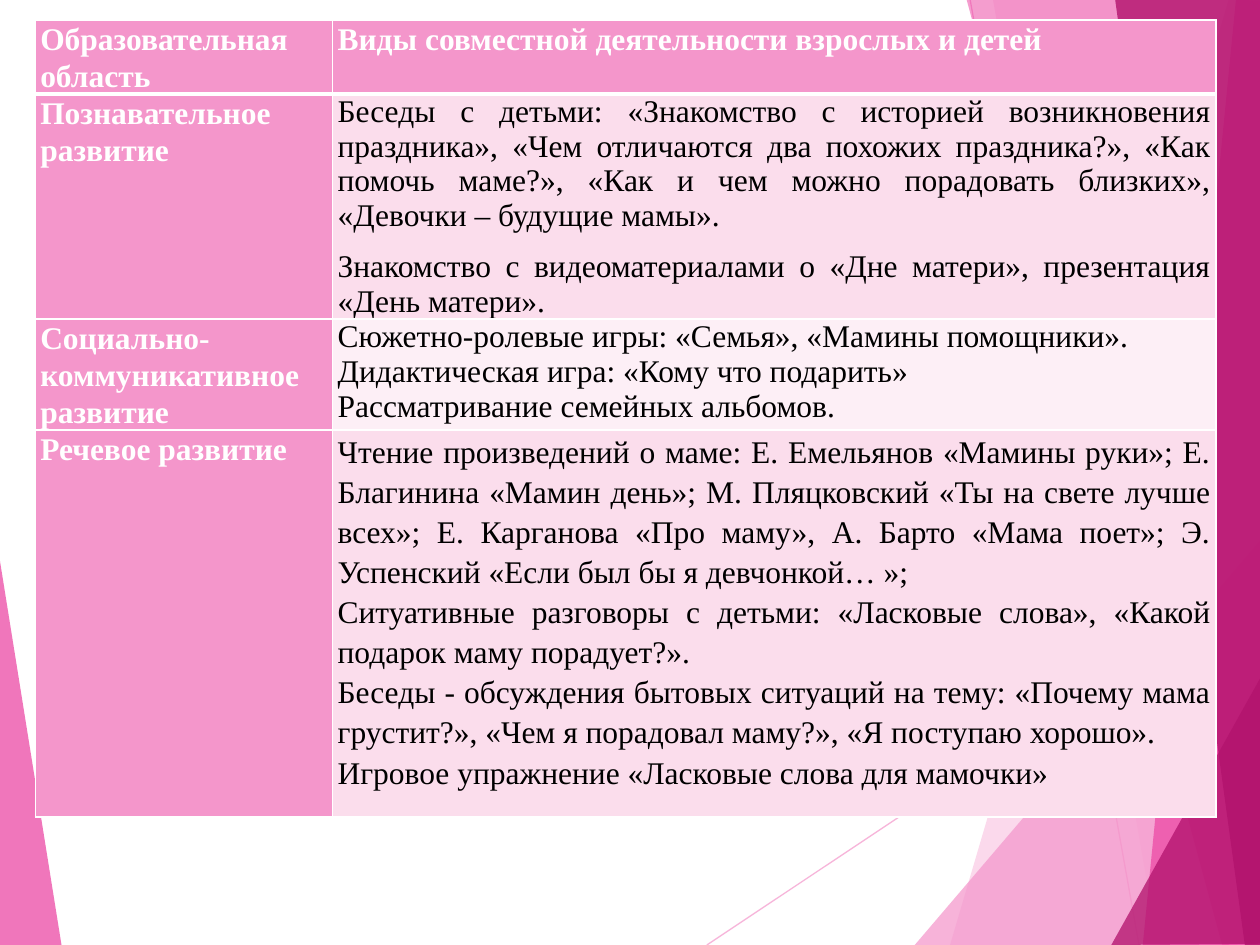
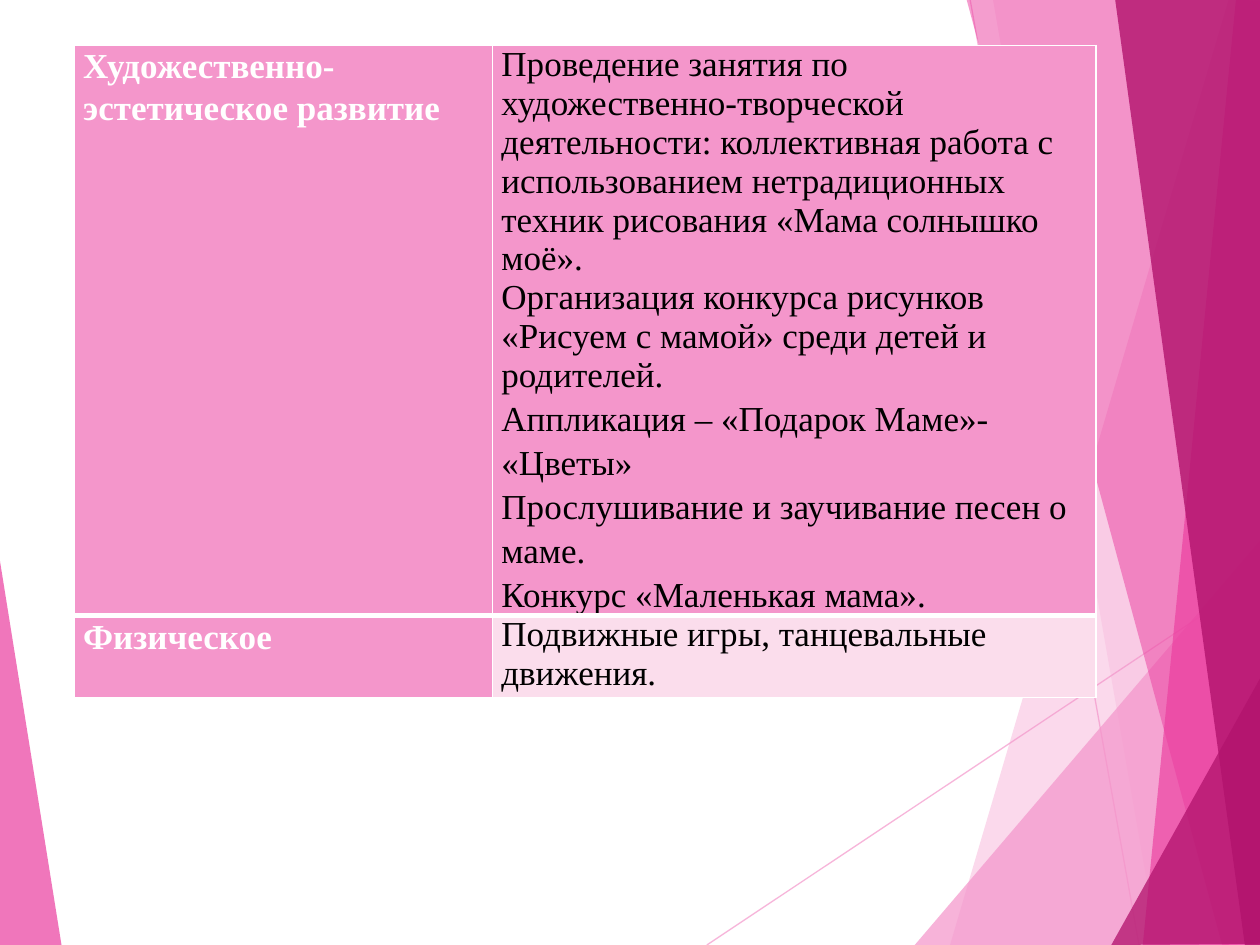
from lxml.etree import SubElement
from pptx import Presentation
from pptx.dml.color import RGBColor
from pptx.enum.shapes import MSO_CONNECTOR
from pptx.enum.text import PP_ALIGN
from pptx.oxml import parse_xml
from pptx.oxml.ns import nsdecls, qn
from pptx.util import Inches, Pt

FONT = "Times New Roman"
WHITE = RGBColor(0xFF, 0xFF, 0xFF)
BLACK = RGBColor(0, 0, 0)
PINK = RGBColor(0xF4, 0x96, 0xCB)
MAGENTA = RGBColor(0xEB, 0x3D, 0x9F)
CRIMSON = RGBColor(0xB2, 0x13, 0x6D)
BAND_DARK = RGBColor(0xFB, 0xDD, 0xEC)
BAND_LIGHT = RGBColor(0xFD, 0xEF, 0xF6)

RAYS = [((5.61, 7.5), (10.01, 4.57)), ((7.7, 0), (9.04, 7.5))]
RAY_ALPHA = 70
FACETS = [
    (PINK, 36, [(9.75, 0), (7.54, 7.5), (10.02, 7.51), (10.01, 0.01)]),
    (PINK, 20, [(7.88, -0.01), (9.19, 7.5), (10.01, 7.5), (10.01, -0.01)]),
    (PINK, 72, [(7.26, 7.5), (10, 4.29), (10.01, 7.5)]),
    (MAGENTA, 50, [(7.67, -0.01), (9.7, 7.5), (10.01, 7.49), (10.01, -0.01)]),
    (MAGENTA, 66, [(9.81, -0.01), (9.07, 7.5), (10.01, 7.5), (10, -0.01)]),
    (CRIMSON, 80, [(8.85, -0.01), (9.88, 7.5), (10.02, 7.5), (10, -0.01)]),
    (CRIMSON, 76, [(8.82, 7.5), (10.02, 5.35), (10.02, 7.49)]),
    (MAGENTA, 70, [(-0.01, 4.39), (0.49, 7.51), (-0.01, 7.5)]),
]

LABEL = dict(color=WHITE, bold=True, spacing=1.06, after=8)
PLAIN = dict()
JUSTIFIED = dict(align=PP_ALIGN.JUSTIFY)
SPACED = dict(JUSTIFIED, before=4.5, after=4.5)
LOOSE = dict(JUSTIFIED, spacing=1.15)
FIXED = dict(spacing=Pt(25.2))

TABLES = [
    dict(
        left=0.28, top=0.16, cols=[2.36, 7.01], heights=[0.57, 1.78, 0.86, 3.07],
        inset=0.04, size=18,
        rows=[
            ("Образовательная область", PINK,
             [("Виды совместной деятельности взрослых и детей", LABEL)]),
            ("Познавательное развитие", BAND_DARK, [
                ("Беседы с детьми: «Знакомство с историей возникновения праздника», "
                 "«Чем отличаются два похожих праздника?», «Как помочь маме?», "
                 "«Как и чем можно порадовать близких», «Девочки – будущие мамы».", SPACED),
                ("Знакомство с видеоматериалами о «Дне матери», "
                 "презентация «День матери».", SPACED),
            ]),
            ("Социально-коммуникативное развитие", BAND_LIGHT, [
                ("Сюжетно-ролевые игры: «Семья», «Мамины помощники».", JUSTIFIED),
                ("Дидактическая игра: «Кому что подарить»", JUSTIFIED),
                ("Рассматривание семейных альбомов.", JUSTIFIED),
            ]),
            ("Речевое развитие", BAND_DARK, [
                ("Чтение произведений о маме: Е. Емельянов «Мамины руки»; "
                 "Е. Благинина «Мамин день»; М. Пляцковский «Ты на свете лучше всех»; "
                 "Е. Карганова «Про маму», А. Барто «Мама поет»; "
                 "Э. Успенский «Если был бы я девчонкой… »;", LOOSE),
                ("Ситуативные разговоры с детьми: «Ласковые слова», "
                 "«Какой подарок маму порадует?».", LOOSE),
                ("Беседы - обсуждения бытовых ситуаций на тему: «Почему мама грустит?», "
                 "«Чем я порадовал маму?», «Я поступаю хорошо».", LOOSE),
                ("Игровое упражнение «Ласковые слова для мамочки»", LOOSE),
            ]),
        ],
    ),
    dict(
        left=0.59, top=0.36, cols=[3.32, 4.79], heights=[4.52, 0.65],
        inset=0.07, size=20,
        rows=[
            ("Художественно-эстетическое развитие", PINK, [
                ("Проведение занятия по художественно-творческой деятельности: "
                 "коллективная работа с использованием нетрадиционных техник "
                 "рисования «Мама солнышко моё».", PLAIN),
                ("Организация конкурса рисунков «Рисуем с мамой» "
                 "среди детей и родителей.", PLAIN),
                ("Аппликация – «Подарок Маме»-", FIXED),
                ("«Цветы»", FIXED),
                ("Прослушивание и заучивание песен о", FIXED),
                ("маме.", FIXED),
                ("Конкурс «Маленькая мама».", FIXED),
            ]),
            ("Физическое", BAND_DARK,
             [("Подвижные игры, танцевальные движения.", PLAIN)]),
        ],
    ),
]


def set_alpha(sp, percent):
    color = next(sp._element.spPr.iter(qn("a:srgbClr")))
    SubElement(color, qn("a:alpha"), val=str(percent * 1000))


def add_backdrop(s):
    for start, end in RAYS:
        ray = s.shapes.add_connector(
            MSO_CONNECTOR.STRAIGHT, *[Inches(v) for v in start + end])
        ray.line.color.rgb = PINK
        ray.line.width = Pt(0.75)
        set_alpha(ray, RAY_ALPHA)
        SubElement(ray._element.spPr, qn("a:effectLst"))
    for color, alpha, points in FACETS:
        first, *rest = [(Inches(x), Inches(y)) for x, y in points]
        builder = s.shapes.build_freeform(*first)
        builder.add_line_segments(rest, close=True)
        facet = builder.convert_to_shape()
        facet.fill.solid()
        facet.fill.fore_color.rgb = color
        facet.line.fill.background()
        facet.shadow.inherit = False
        set_alpha(facet, alpha)


def write(p, text, size, color=BLACK, bold=False, align=PP_ALIGN.LEFT,
          spacing=1.0, before=0, after=0):
    p.alignment = align
    p.line_spacing = spacing
    p.space_before, p.space_after = Pt(before), Pt(after)
    r = p.add_run()
    r.text = text
    r.font.name, r.font.size, r.font.bold = FONT, Pt(size), bold
    r.font.color.rgb = color


def set_borders(cell, top, bottom):
    tc_pr = cell._tc.get_or_add_tcPr()
    for i, (side, width) in enumerate([("L", 1), ("R", 1), ("T", top), ("B", bottom)]):
        tc_pr.insert(i, parse_xml(
            f'<a:ln{side} {nsdecls("a")} w="{Pt(width)}"><a:solidFill>'
            f'<a:srgbClr val="{WHITE}"/></a:solidFill></a:ln{side}>'))


def fill_cell(cell, paragraphs, fill, inset, size):
    cell.margin_left = cell.margin_right = Inches(inset)
    cell.margin_top = cell.margin_bottom = 0
    cell.fill.solid()
    cell.fill.fore_color.rgb = fill
    tf = cell.text_frame
    for i, (text, style) in enumerate(paragraphs):
        p = tf.add_paragraph() if i else tf.paragraphs[0]
        write(p, text, size, **style)


def add_activity_table(s, left, top, cols, heights, inset, size, rows):
    frame = s.shapes.add_table(
        len(rows), len(cols), Inches(left), Inches(top),
        Inches(sum(cols)), Inches(sum(heights)))
    table = frame.table
    for column, width in zip(table.columns, cols):
        column.width = Inches(width)
    for i, (area, band, activities) in enumerate(rows):
        table.rows[i].height = Inches(heights[i])
        for j, (paragraphs, fill) in enumerate([([(area, LABEL)], PINK), (activities, band)]):
            cell = table.cell(i, j)
            fill_cell(cell, paragraphs, fill, inset, size)
            set_borders(cell, top=3 if i == 1 else 1, bottom=3 if i == 0 else 1)


def main():
    prs = Presentation()
    prs.slide_width, prs.slide_height = Inches(10), Inches(7.5)
    for content in TABLES:
        s = prs.slides.add_slide(prs.slide_layouts[6])
        add_backdrop(s)
        add_activity_table(s, **content)
    prs.save("out.pptx")


if __name__ == "__main__":
    main()
